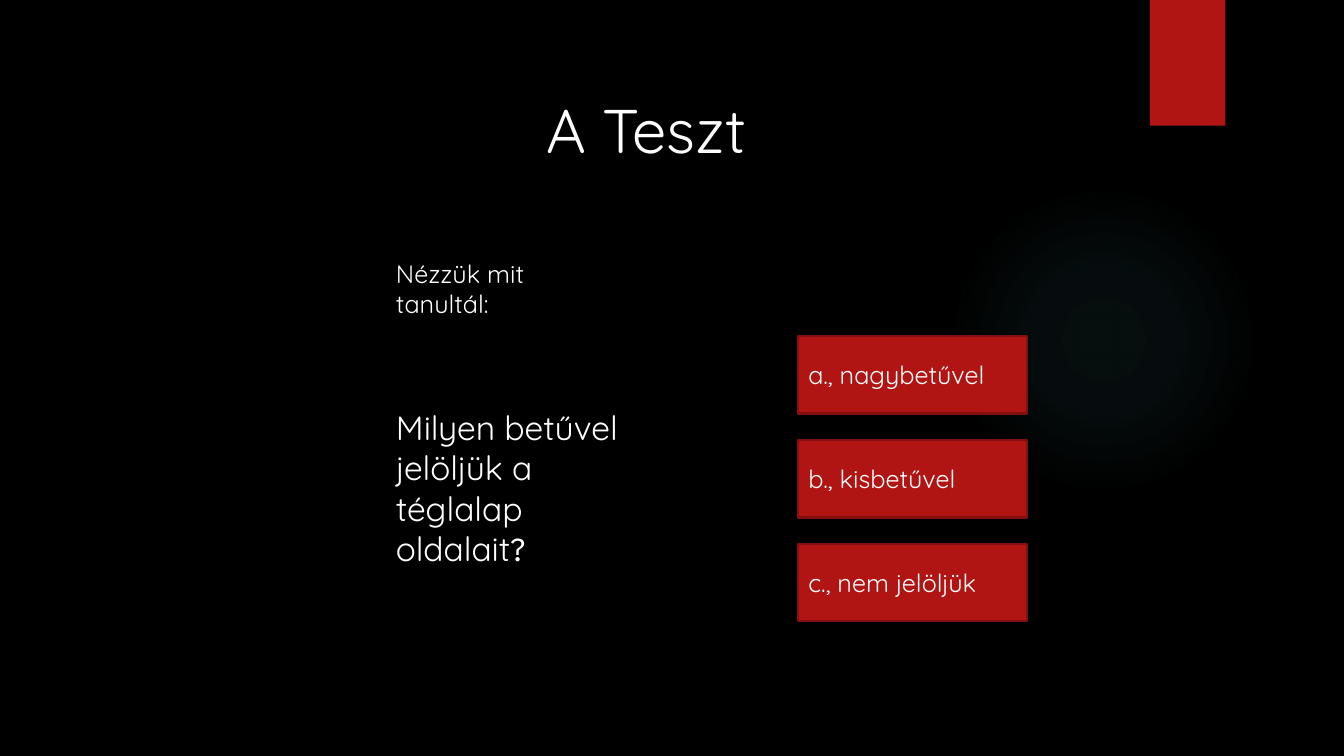
"""Build the quiz slide about naming the sides of a rectangle."""
from dataclasses import dataclass

from lxml import etree
from pptx import Presentation
from pptx import util as u
from pptx.dml.color import RGBColor
from pptx.enum import shapes, text
from pptx.oxml import ns

BLACK = RGBColor(0x00, 0x00, 0x00)
WHITE = RGBColor(0xFF, 0xFF, 0xFF)
RED = RGBColor(0xB0, 0x15, 0x13)
DARK_RED = RGBColor(0x82, 0x10, 0x0E)
TEAL = RGBColor(0x50, 0xB9, 0xC1)

BODY_FONT = "Quicksand"
MARK_FONT = "League Spartan"
GLOW_STOPS = ((0, 7), (36, 6), (69, 0))
ANSWERS = ("a., nagybetűvel", "b., kisbetűvel", "c., nem jelöljük")
ANSWER_PITCH = 2.62


@dataclass(frozen=True)
class Box:
    """Position and size in centimetres."""

    left: float
    top: float
    width: float
    height: float

    def lengths(self) -> tuple:
        """Return the four lengths for a shape call."""
        return tuple(u.Cm(n) for n in (self.left, self.top, self.width, self.height))


@dataclass(frozen=True)
class Passage:
    """Runs of wording with their fonts, in one size."""

    runs: tuple[tuple[str, str], ...]
    size: int


TITLE = Passage((("A Teszt", BODY_FONT),), 44)
TITLE_BOX = Box(13.51, 2.18, 5.74, 2.13)
PROMPTS = (
    (Box(9.73, 6.38, 4.5, 1.8), Passage((("Nézzük mit tanultál:", BODY_FONT),), 18)),
    (
        Box(9.73, 10.13, 6.96, 4.37),
        Passage(
            (("Milyen betűvel jelöljük a téglalap oldalait", BODY_FONT), ("?", MARK_FONT)),
            24,
        ),
    ),
)


def set_all(target, formats: dict) -> None:
    """Set each named attribute on the target."""
    for name, value in formats.items():
        setattr(target, name, value)


def write(shape, passage: Passage, anchor=text.MSO_ANCHOR.TOP) -> None:
    """Put a left-aligned white passage into a shape."""
    frame = shape.text_frame
    set_all(frame, {
        "word_wrap": True,
        "auto_size": text.MSO_AUTO_SIZE.NONE,
        "vertical_anchor": anchor,
    })
    paragraph = frame.paragraphs[0]
    paragraph.alignment = text.PP_ALIGN.LEFT
    for wording, font_name in passage.runs:
        run = paragraph.add_run()
        run.text = wording
        set_all(run.font, {"name": font_name, "size": u.Pt(passage.size)})
        run.font.color.rgb = WHITE


def add_block(slide, kind, box: Box, color: RGBColor):
    """Add a flat filled shape without an outline."""
    block = slide.shapes.add_shape(kind, *box.lengths())
    block.shadow.inherit = False
    block.fill.solid()
    block.fill.fore_color.rgb = color
    block.line.fill.background()
    return block


def add_glow(slide, box: Box) -> None:
    """Add the faint round glow that fades outwards."""
    glow = add_block(slide, shapes.MSO_SHAPE.OVAL, box, TEAL)
    solid = glow.fill._xPr.find(ns.qn("a:solidFill"))
    gradient = etree.Element(ns.qn("a:gradFill"), rotWithShape="1")
    stops = etree.SubElement(gradient, ns.qn("a:gsLst"))
    for position, opacity in GLOW_STOPS:
        stop = etree.SubElement(stops, ns.qn("a:gs"), pos=str(position * 1000))
        color = etree.SubElement(stop, ns.qn("a:srgbClr"), val=str(TEAL))
        etree.SubElement(color, ns.qn("a:alpha"), val=str(opacity * 1000))
    circle = etree.SubElement(gradient, ns.qn("a:path"), path="circle")
    etree.SubElement(
        circle, ns.qn("a:fillToRect"), dict.fromkeys(("l", "t", "r", "b"), "50000")
    )
    solid.getparent().replace(solid, gradient)


def add_answer(slide, box: Box, wording: str) -> None:
    """Add one answer button."""
    button = add_block(slide, shapes.MSO_SHAPE.ACTION_BUTTON_CUSTOM, box, RED)
    button.line.color.rgb = DARK_RED
    button.line.width = u.Pt(1.5)
    write(button, Passage(((wording, BODY_FONT),), 18), text.MSO_ANCHOR.MIDDLE)


def main() -> None:
    """Build and save the presentation."""
    deck = Presentation()
    set_all(deck, {"slide_width": u.Cm(33.87), "slide_height": u.Cm(19.05)})
    slide = deck.slides.add_slide(deck.slide_layouts.get_by_name("Title Only"))
    slide.background.fill.solid()
    slide.background.fill.fore_color.rgb = BLACK

    add_glow(slide, Box(23.9, 4.65, 7.82, 7.82))
    add_block(slide, shapes.MSO_SHAPE.RECTANGLE, Box(28.98, 0, 1.9, 3.17), RED)

    title = slide.shapes.title
    set_all(title, dict(zip(("left", "top", "width", "height"), TITLE_BOX.lengths())))
    write(title, TITLE)
    for box, passage in PROMPTS:
        write(slide.shapes.add_textbox(*box.lengths()), passage)
    for row, wording in enumerate(ANSWERS):
        add_answer(slide, Box(20.12, 8.46 + row * ANSWER_PITCH, 5.77, 1.96), wording)

    deck.save("out.pptx")


if __name__ == "__main__":
    main()
